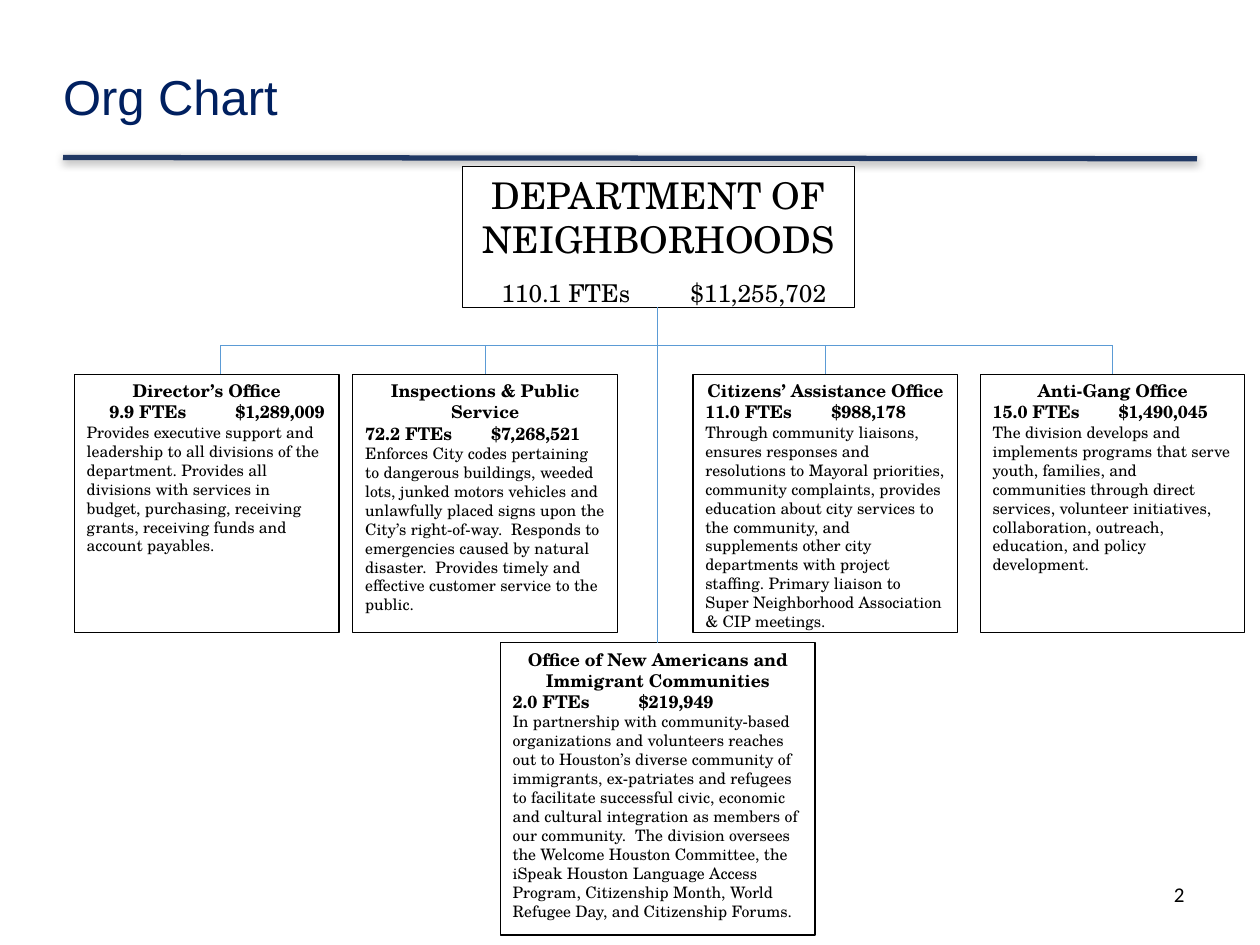
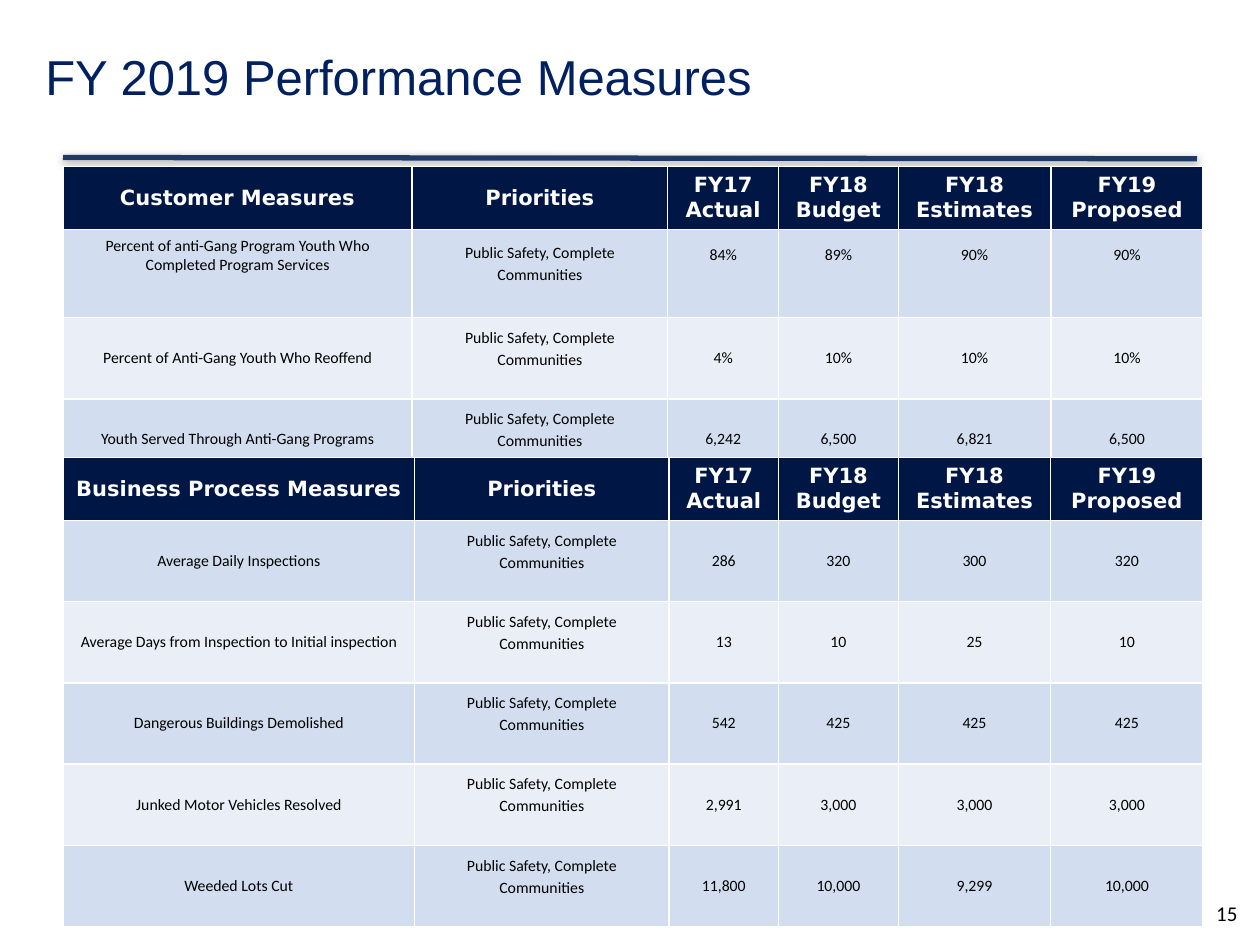
from lxml import etree
from pptx import Presentation
from pptx.dml.color import RGBColor
from pptx.enum.shapes import MSO_CONNECTOR, MSO_SHAPE
from pptx.enum.text import MSO_ANCHOR, MSO_AUTO_SIZE, PP_ALIGN
from pptx.oxml import parse_xml
from pptx.oxml.ns import nsdecls, qn
from pptx.util import Inches, Pt

LEFT, CENTER, RIGHT = PP_ALIGN.LEFT, PP_ALIGN.CENTER, PP_ALIGN.RIGHT
MIDDLE, TOP = MSO_ANCHOR.MIDDLE, MSO_ANCHOR.TOP
STRAIGHT, RECTANGLE = MSO_CONNECTOR.STRAIGHT, MSO_SHAPE.RECTANGLE

BLACK = RGBColor(0x00, 0x00, 0x00)
WHITE = RGBColor(0xFF, 0xFF, 0xFF)
TITLE_BLUE = RGBColor(0x00, 0x20, 0x60)
RULE_BLUE = RGBColor(0x20, 0x38, 0x64)
BRANCH_BLUE = RGBColor(0x5B, 0x9B, 0xD5)
HEADER_NAVY = RGBColor(0x00, 0x17, 0x46)
BANDS = RGBColor(0xD2, 0xDE, 0xEF), RGBColor(0xEA, 0xEF, 0xF7)

SCHOLA = "TeX Gyre Schola"
HEADING_FONT = {"name": SCHOLA, "size": Pt(10), "bold": True}
BODY_FONT = {"name": SCHOLA, "size": Pt(9), "bold": False}
HEADER_CELL_FONT = {"name": "DejaVu Sans", "size": Pt(12), "bold": True}
CELL_FONT = {"name": "Calibri", "size": Pt(9), "bold": False}


def style(paragraph, color, alignment, font_values):
    paragraph.alignment = alignment
    paragraph.font.color.rgb = color
    for attribute, value in font_values.items():
        setattr(paragraph.font, attribute, value)


def draw_line(slide, x1, y1, x2, y2, color, width):
    """Draw a line without a shadow; positions in inches, width in points."""
    line = slide.shapes.add_connector(STRAIGHT, *map(Inches, (x1, y1, x2, y2)))
    line.line.color.rgb = color
    line.line.width = Pt(width)
    etree.SubElement(line._element.spPr, qn("a:effectLst"))
    return line


prs = Presentation()
prs.slide_width, prs.slide_height = Inches(10), Inches(7.5)
title_only = prs.slide_layouts[5]

# Title and page number of each slide: text, left, top, number, left, top
frames = [
    ("Org Chart", 0.5, 0.33, "2", 7.17, 6.95),
    ("FY 2019 Performance Measures", 0.36, 0.17, "15", 7.59, 7.1),
]
for heading, left, top, number, number_left, number_top in frames:
    slide = prs.slides.add_slide(title_only)
    title = slide.shapes.title
    title.left, title.top = Inches(left), Inches(top)
    title.width, title.height = Inches(6.86), Inches(0.92)
    frame = title.text_frame
    frame.text = heading
    frame.auto_size = MSO_AUTO_SIZE.NONE
    frame.vertical_anchor = MIDDLE
    frame.margin_left = frame.margin_top = frame.margin_right = frame.margin_bottom = 0
    frame.paragraphs[0].line_spacing = 0.9
    style(frame.paragraphs[0], TITLE_BLUE, LEFT, {"name": "Arial", "size": Pt(28)})

    page = slide.shapes.add_textbox(
        Inches(number_left), Inches(number_top), Inches(2.33), Inches(0.4))
    page.text_frame.word_wrap = True
    page.text_frame.text = number
    style(page.text_frame.paragraphs[0], BLACK, RIGHT, {"name": "Calibri", "size": Pt(12)})

org_slide, measures_slide = prs.slides

# The rule under the title belongs to the shared layout
rule = draw_line(org_slide, 0.5, 1.25, 9.5, 1.26, RULE_BLUE, 3)
rule._element.spPr.find(qn("a:effectLst")).append(parse_xml(
    f'<a:outerShdw {nsdecls("a")} blurRad="63500" dist="20320" dir="5400000">'
    '<a:srgbClr val="000000"><a:alpha val="38000"/></a:srgbClr></a:outerShdw>'))
title_only.shapes._spTree.append(rule._element)

# Org chart
OFFICE_TOP, OFFICE_WIDTH, OFFICE_HEIGHT = 2.97, 2.1, 2.05
TRUNK_X, BRANCH_Y, ROOT_BOTTOM, IMMIGRANT_TOP = 5.22, 2.74, 2.44, 5.1
BRANCH_XS = 1.75, 3.85, 6.55, 8.83

# Each unit: box, name, staff and budget, indent and tab of that line, duties
units = [
    ((3.67, 1.32, 3.11, ROOT_BOTTOM - 1.32), "DEPARTMENT OF NEIGHBORHOODS",
     "110.1 FTEs\t$11,255,702", 0.21, 1.61, None),
    ((0.59, OFFICE_TOP, OFFICE_WIDTH, OFFICE_HEIGHT), "Director’s Office",
     "9.9 FTEs\t$1,289,009", 0.18, 1,
     "Provides executive support and leadership to all divisions of the department. "
     "Provides all divisions with services in budget, purchasing, receiving grants, "
     "receiving funds and account payables."),
    ((2.8, OFFICE_TOP, OFFICE_WIDTH, OFFICE_HEIGHT), "Inspections & Public Service",
     "72.2 FTEs\t$7,268,521", 0, 1,
     "Enforces City codes pertaining to dangerous buildings, weeded lots, junked motors "
     "vehicles and unlawfully placed signs upon the City’s right-of-way.  Responds to "
     "emergencies caused by natural disaster.  Provides timely and effective customer "
     "service to the public."),
    ((5.5, OFFICE_TOP, OFFICE_WIDTH, OFFICE_HEIGHT), "Citizens’ Assistance Office",
     "11.0 FTEs\t$988,178", 0, 1,
     "Through community liaisons, ensures responses and resolutions to Mayoral priorities, "
     "community complaints, provides education about city services to the community, and "
     "supplements other city departments with project staffing. Primary liaison to Super "
     "Neighborhood Association & CIP meetings."),
    ((7.78, OFFICE_TOP, OFFICE_WIDTH, OFFICE_HEIGHT), "Anti-Gang Office",
     "15.0 FTEs\t$1,490,045", 0, 1,
     "The division develops and implements programs that serve youth, families, and "
     "communities through direct services, volunteer initiatives, collaboration, outreach, "
     "education, and policy development."),
    ((3.97, IMMIGRANT_TOP, 2.5, 2.32), "Office of New Americans and Immigrant Communities",
     "2.0 FTEs\t$219,949", 0, 1,
     "In partnership with community-based organizations and volunteers reaches out to "
     "Houston’s diverse community of immigrants, ex-patriates and refugees to facilitate "
     "successful civic, economic and cultural integration as members of our community.  "
     "The division oversees the Welcome Houston Committee, the iSpeak Houston Language "
     "Access Program, Citizenship Month, World Refugee Day, and Citizenship Forums."),
]
for box, name, resources, indent, tab, duties in units:
    unit = org_slide.shapes.add_shape(RECTANGLE, *map(Inches, box))
    unit.shadow.inherit = False
    unit.fill.solid()
    unit.fill.fore_color.rgb = WHITE
    unit.line.color.rgb = BLACK
    unit.line.width = Pt(0.75)
    frame = unit.text_frame
    frame.word_wrap = True
    frame.vertical_anchor = TOP
    frame.text = "\n".join(filter(None, (name, resources, duties)))
    name_line, resource_line, *duty_lines = frame.paragraphs

    properties = resource_line._p.get_or_add_pPr()
    properties.set("marL", str(Inches(indent)))
    properties.set("indent", "0")
    tabs = etree.SubElement(properties, qn("a:tabLst"))
    etree.SubElement(tabs, qn("a:tab"), pos=str(Inches(tab)), algn="l")

    if duties:
        style(name_line, BLACK, CENTER, HEADING_FONT)
        style(resource_line, BLACK, LEFT, HEADING_FONT)
        style(duty_lines[0], BLACK, LEFT, BODY_FONT)
    else:
        name_line.space_after = Pt(10)
        style(name_line, BLACK, CENTER, {"name": SCHOLA, "size": Pt(21)})
        style(resource_line, BLACK, LEFT, {"name": SCHOLA, "size": Pt(14)})

branches = [
    (TRUNK_X, ROOT_BOTTOM, TRUNK_X, IMMIGRANT_TOP),
    (BRANCH_XS[0], BRANCH_Y, BRANCH_XS[-1], BRANCH_Y),
    *((x, BRANCH_Y, x, OFFICE_TOP) for x in BRANCH_XS),
]
for ends in branches:
    draw_line(org_slide, *ends, BRANCH_BLUE, 0.5)

# Performance measures
PRIORITY = "Public Safety, Complete Communities"
YEARS = "FY17\nActual", "FY18\nBudget", "FY18\nEstimates", "FY19\nProposed"
HEADER_HEIGHT, ROW_HEIGHT, TALL_ROW = 0.49, 0.645, 0.7
LONG_MEASURE = "Percent of anti-Gang Program Youth Who Completed Program Services"

# Each table: top, column widths, first heading, rows of measure and values
tables = [
    (1.32, (2.77, 2.03, 0.88, 0.95, 1.21, 1.21), "Customer Measures", [
        (LONG_MEASURE, "84%", "89%", "90%", "90%"),
        ("Percent of Anti-Gang Youth Who Reoffend", "4%", "10%", "10%", "10%"),
        ("Youth Served Through Anti-Gang Programs", "6,242", "6,500", "6,821", "6,500"),
    ]),
    (3.63, (2.79, 2.02, 0.87, 0.95, 1.21, 1.21), "Business Process Measures", [
        ("Average Daily Inspections", "286", "320", "300", "320"),
        ("Average Days from Inspection to Initial inspection", "13", "10", "25", "10"),
        ("Dangerous Buildings Demolished", "542", "425", "425", "425"),
        ("Junked Motor Vehicles Resolved", "2,991", "3,000", "3,000", "3,000"),
        ("Weeded Lots Cut", "11,800", "10,000", "9,299", "10,000"),
    ]),
]
for top, widths, heading, measures in tables:
    rows = [(heading, "Priorities", *YEARS)]
    rows += [(measure, PRIORITY, *values) for measure, *values in measures]
    heights = [HEADER_HEIGHT]
    heights += [TALL_ROW if row[0] == LONG_MEASURE else ROW_HEIGHT for row in rows[1:]]
    table = measures_slide.shapes.add_table(
        len(rows), len(widths), Inches(0.5), Inches(top),
        Inches(sum(widths)), Inches(sum(heights))).table
    for column, width in zip(table.columns, widths):
        column.width = Inches(width)
    for r, row in enumerate(rows):
        table.rows[r].height = Inches(heights[r])
        for c, text in enumerate(row):
            cell = table.cell(r, c)
            cell.text = text
            cell.vertical_anchor = MIDDLE
            cell.fill.solid()
            cell.fill.fore_color.rgb = BANDS[(r - 1) % 2] if r else HEADER_NAVY
            for paragraph in cell.text_frame.paragraphs:
                style(paragraph, BLACK if r else WHITE, CENTER,
                      CELL_FONT if r else HEADER_CELL_FONT)
            if text == PRIORITY:
                cell.text_frame.paragraphs[0].line_spacing = 1.15
                cell.margin_bottom = Inches(0.22)
            elif row[0] == LONG_MEASURE:
                cell.margin_bottom = Inches(0.34)

prs.save("out.pptx")
